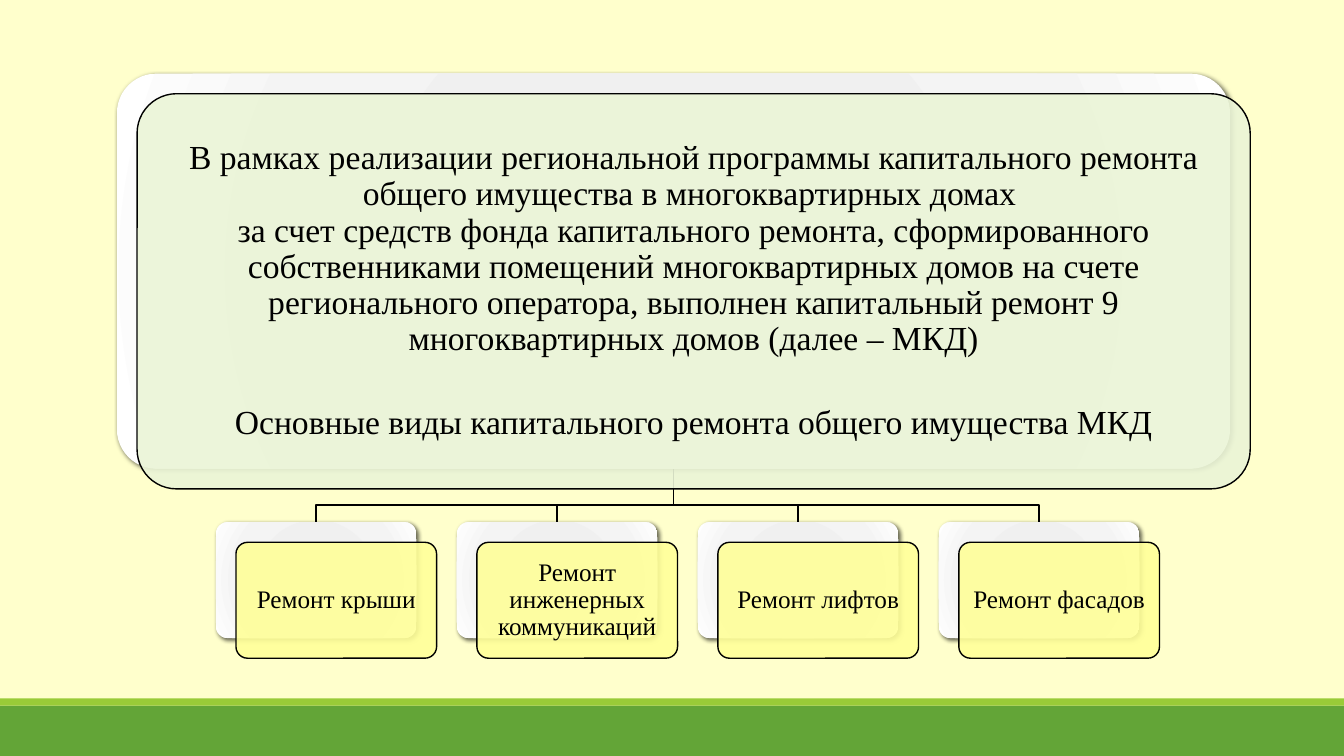
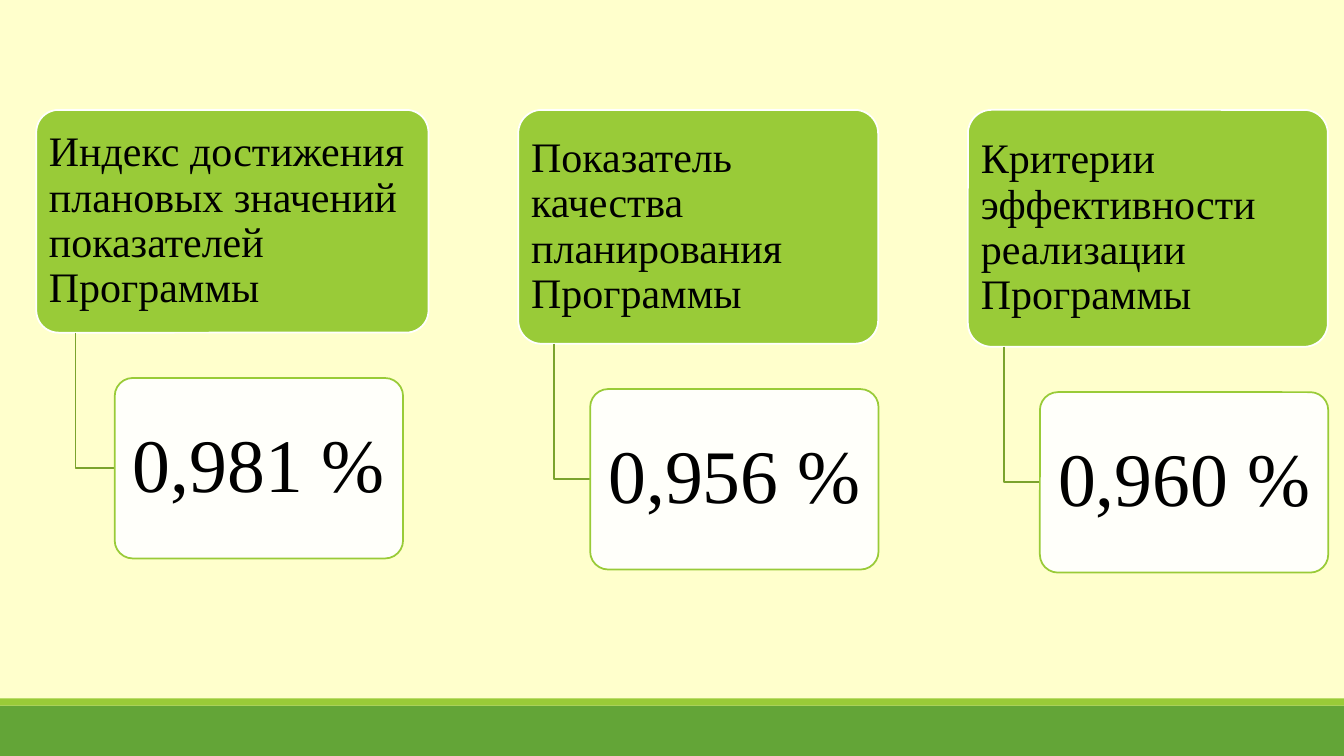
from lxml.etree import SubElement
from pptx import Presentation
from pptx.dml.color import RGBColor
from pptx.enum.shapes import MSO_SHAPE as Shape
from pptx.enum.text import MSO_ANCHOR as Anchor, PP_ALIGN as Align
from pptx.oxml import parse_xml
from pptx.oxml.ns import nsdecls, qn
from pptx.util import Inches, Pt

COLORS = {
    "background": "FFFFCC",
    "band": "63A537",
    "accent": "99CB38",
    "elbow": "7BA32D",
    "summary": "EBF5D7",
    "work": "FFFF99",
    "white": "FFFFFF",
    "black": "000000",
}
PLATE_STOPS = [(0, "EEEEEE"), (34, "F0F0F0"), (70, "F4F4F4"), (100, "FFFFFF")]
WIDTH, HEIGHT = 13.33, 7.5
PLATE_SHIFT = 0.2

SUMMARY = [
    "В рамках реализации региональной программы капитального ремонта общего имущества "
    "в многоквартирных домах \vза счет средств фонда капитального ремонта, "
    "сформированного собственниками помещений многоквартирных домов на счете "
    "регионального оператора, выполнен капитальный ремонт 9 многоквартирных домов "
    "(далее – МКД)",
    "Основные виды капитального ремонта общего имущества МКД",
]
WORKS = ["Ремонт крыши", "Ремонт инженерных коммуникаций", "Ремонт лифтов",
         "Ремонт фасадов"]
# left, width, height, heading, value
INDICATORS = [
    (0.36, 3.89, 2.21, "Индекс достижения плановых значений показателей Программы",
     "0,981 %"),
    (5.14, 3.57, 2.32, "Показатель качества планирования Программы", "0,956 %"),
    (9.6, 3.57, 2.35, "Критерии эффективности реализации Программы", "0,960 %"),
]


def rgb(name):
    return RGBColor.from_string(COLORS[name])


class Deck:
    font = "Times New Roman"

    def __init__(self):
        self.presentation = Presentation()
        self.presentation.slide_width = Inches(WIDTH)
        self.presentation.slide_height = Inches(HEIGHT)
        self.slide = None

    def new_slide(self):
        """Start a slide with the shared background and bottom bands."""
        self.slide = self.presentation.slides.add_slide(
            self.presentation.slide_layouts[6])
        background = self.slide.background.fill
        background.solid()
        background.fore_color.rgb = rgb("background")
        self.block(0, 7, WIDTH, 0.5, "band", kind=Shape.RECTANGLE)
        self.block(0, 6.93, WIDTH, 0.07, "accent", kind=Shape.RECTANGLE)

    def block(self, left, top, width, height, fill, line=None, weight=1,
              alpha=None, kind=Shape.ROUNDED_RECTANGLE):
        shape = self.slide.shapes.add_shape(
            kind, Inches(left), Inches(top), Inches(width), Inches(height))
        shape.shadow.inherit = False
        if kind == Shape.ROUNDED_RECTANGLE:
            shape.adjustments[0] = 0.1
        if fill:
            shape.fill.solid()
            shape.fill.fore_color.rgb = rgb(fill)
        else:
            shape.fill.background()
        if alpha:
            color = shape._element.spPr.find(qn("a:solidFill"))[0]
            SubElement(color, qn("a:alpha"), val=str(alpha * 1000))
        self.outline(shape, line, weight)
        return shape

    def outline(self, shape, color, weight):
        if color:
            shape.line.color.rgb = rgb(color)
            shape.line.width = Pt(weight)
        else:
            shape.line.fill.background()

    def plate(self, left, top, width, height):
        """Pale gradient plate with a soft shadow."""
        properties = self.block(left, top, width, height, None)._element.spPr
        stops = "".join(
            f'<a:gs pos="{position * 1000}"><a:srgbClr val="{color}"/></a:gs>'
            for position, color in PLATE_STOPS)
        gradient = parse_xml(
            f'<a:gradFill {nsdecls("a")} rotWithShape="1"><a:gsLst>{stops}</a:gsLst>'
            '<a:path path="circle"><a:fillToRect l="100000" t="100000" r="100000" '
            'b="100000"/></a:path></a:gradFill>')
        properties.replace(properties.find(qn("a:noFill")), gradient)
        properties.find(qn("a:effectLst")).append(parse_xml(
            f'<a:outerShdw {nsdecls("a")} blurRad="{Pt(3)}" dist="{Pt(2)}" '
            f'dir="2700000"><a:srgbClr val="{COLORS["black"]}">'
            '<a:alpha val="60000"/></a:srgbClr></a:outerShdw>'))

    def card(self, left, top, width, height, fill, texts, size, inset):
        """Translucent text card lying over a shifted plate."""
        self.plate(left, top, width, height)
        card = self.block(left + PLATE_SHIFT, top + PLATE_SHIFT, width, height,
                          fill, "black", alpha=90)
        self.set_text(card, texts, size, inset, inset)

    def set_text(self, shape, texts, size, side, edge, align=Align.CENTER):
        frame = shape.text_frame
        frame.word_wrap = True
        frame.vertical_anchor = Anchor.MIDDLE
        frame.margin_left = frame.margin_right = Inches(side)
        frame.margin_top = frame.margin_bottom = Inches(edge)
        frame.text = "\n".join(texts)
        for index, paragraph in enumerate(frame.paragraphs):
            paragraph.alignment = align
            paragraph.line_spacing = 0.9
            if index:
                paragraph.space_before = Pt(34)
            for run in paragraph.runs:
                run.font.name = self.font
                run.font.size = Pt(size)
                run.font.color.rgb = rgb("black")

    def elbow(self, points, color, weight):
        start, *rest = [(Inches(x), Inches(y)) for x, y in points]
        builder = self.slide.shapes.build_freeform(*start)
        builder.add_line_segments(rest, close=False)
        shape = builder.convert_to_shape()
        shape.shadow.inherit = False
        shape.fill.background()
        self.outline(shape, color, weight)


def repair_slide(deck):
    deck.new_slide()
    top, width, height, step = 5.18, 1.99, 1.15, 2.39
    lefts = [2.14 + index * step for index in range(len(WORKS))]

    # Branches from the summary to each kind of work
    trunk, fork = 6.68, 5.01
    for left in lefts:
        middle = left + width / 2
        deck.elbow([(trunk, 4.65), (trunk, fork), (middle, fork), (middle, top)],
                   "black", 1)

    # Summary and kinds of work
    deck.card(1.16, 0.73, 11.04, 3.92, "summary", SUMMARY, 24, 0.1)
    for left, work in zip(lefts, WORKS):
        deck.card(left, top, width, height, "work", [work], 18, 0.07)


def indicator_slide(deck):
    deck.new_slide()
    top, value_width, value_height = 1.09, 2.86, 1.79
    for left, width, height, heading, value in INDICATORS:
        bottom = top + height
        stem, value_left = left + width * 0.1, left + width * 0.2
        value_top = bottom + 0.45
        middle = value_top + value_height / 2

        # Heading
        header = deck.block(left, top, width, height, "accent", "white", 1.25)
        deck.set_text(header, [heading], 30, 0.06, 0.04, Align.LEFT)

        # Value hanging from the heading
        deck.elbow([(stem, bottom), (stem, middle), (value_left, middle)],
                   "elbow", 1.25)
        box = deck.block(value_left, value_top, value_width, value_height,
                         "white", "accent", 1.25, alpha=90)
        deck.set_text(box, [value], 54, 0.11, 0.07)


def main():
    deck = Deck()
    repair_slide(deck)
    indicator_slide(deck)
    deck.presentation.save("out.pptx")


if __name__ == "__main__":
    main()
